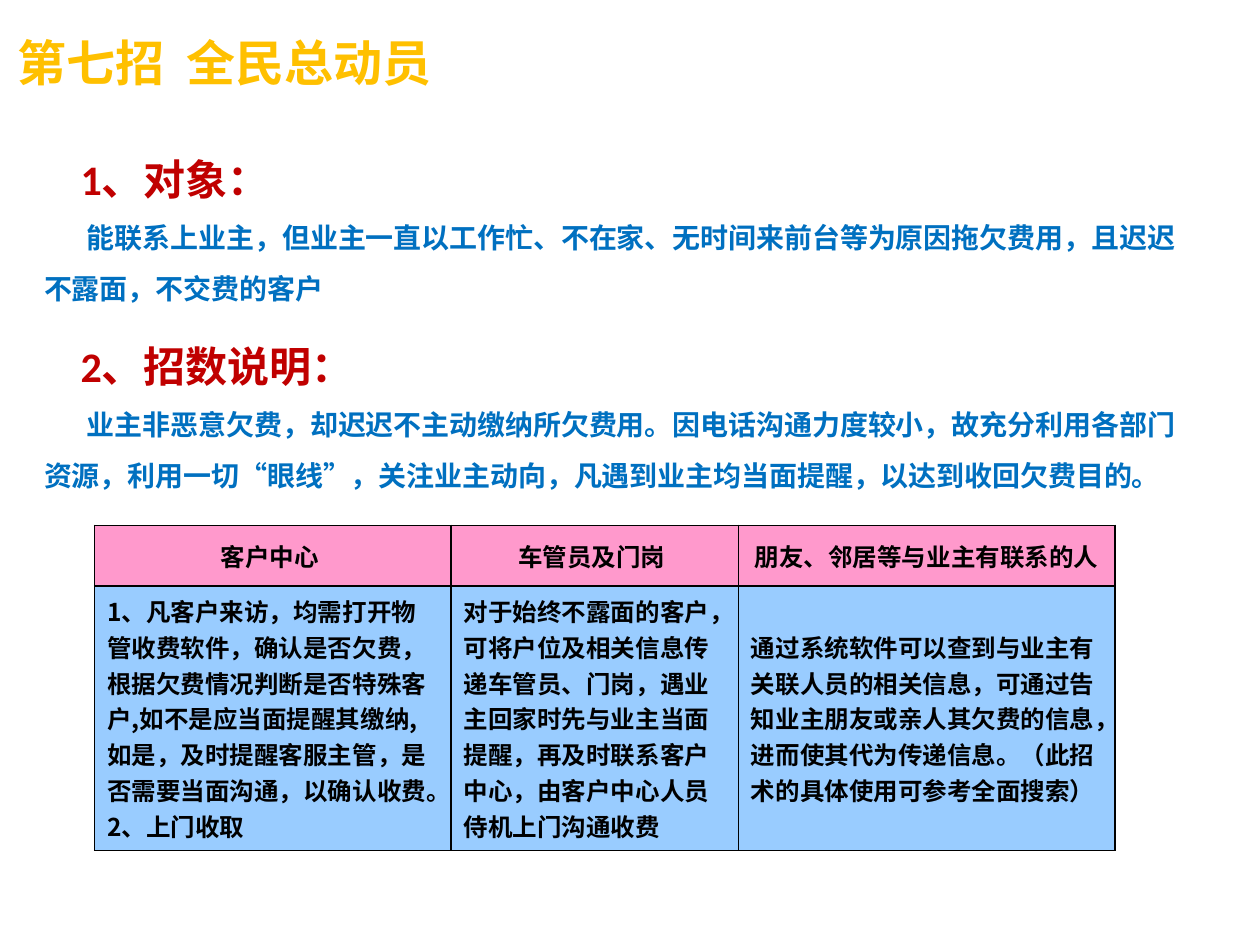
from pptx import Presentation
from pptx.dml.color import RGBColor
from pptx.enum import text
from pptx.oxml import ns
from pptx.util import Inches, Pt
from lxml import etree

COLORS = {
    "gold": "FFC000",
    "red": "C00000",
    "blue": "0070C0",
    "black": "000000",
    "pink": "FF99CC",
    "sky": "99CCFF",
}
CJK = "Noto Sans CJK SC"


def format_paragraph(para, size, color, latin=CJK):
    for span in para.runs:
        span.font.size = Pt(size)
        span.font.bold = True
        span.font.name = latin
        span.font.color.rgb = RGBColor.from_string(COLORS[color])
        east_asian = etree.SubElement(span.font._element, ns.qn("a:ea"))
        east_asian.set("typeface", CJK)


def place(box, left, top, width, height):
    box.left, box.top = Inches(left), Inches(top)
    box.width, box.height = Inches(width), Inches(height)
    box.text_frame.word_wrap = True
    box.text_frame.auto_size = text.MSO_AUTO_SIZE.NONE


deck = Presentation()
deck.slide_width, deck.slide_height = Inches(10), Inches(7.5)
page = deck.slides.add_slide(deck.slide_layouts[1])

title = page.shapes.title
place(title, 0, 0.21, 9.06, 0.57)
title.text_frame.text = " 第七招  全民总动员"
title.text_frame.vertical_anchor = text.MSO_ANCHOR.MIDDLE
para = title.text_frame.paragraphs[0]
para.alignment = text.PP_ALIGN.LEFT
format_paragraph(para, 28, "gold", "Times New Roman")
para.runs[0].text = " "
para.runs[0].font.size = Pt(12)
span = para.add_run()
span.text = "第七招  全民总动员"
format_paragraph(para, 28, "gold", "Times New Roman")
para.runs[0].font.size = Pt(12)

sections = [
    ("1、对象：",
     " 能联系上业主，但业主一直以工作忙、不在家、无时间来前台等为原因拖欠费用，且迟迟不露面，不交费的客户"),
    ("2、招数说明：",
     " 业主非恶意欠费，却迟迟不主动缴纳所欠费用。因电话沟通力度较小，故充分利用各部门资源，"
     "利用一切“眼线”，关注业主动向，凡遇到业主均当面提醒，以达到收回欠费目的。"),
]
body = page.placeholders[1]
place(body, 0.25, 0.92, 9.21, 2.99)
frame = body.text_frame
frame.vertical_anchor = text.MSO_ANCHOR.TOP
frame.margin_top = Inches(0.3)
frame.text = "\n".join(line for section in sections for line in section)
for index, para in enumerate(frame.paragraphs):
    para.line_spacing = Pt(28.8)
    para.space_before = Pt(20.5 if index == 2 else 0)
    properties = para._p.get_or_add_pPr()
    properties.set("marL", "0")
    properties.set("indent", str(Inches(0.29)))
    etree.SubElement(properties, ns.qn("a:buNone"))
    if index % 2 == 0:
        format_paragraph(para, 24, "red", "Calibri")
    else:
        format_paragraph(para, 16, "blue")

rows = [
    ["客户中心 ", "车管员及门岗 ", "朋友、邻居等与业主有联系的人"],
    ["1、凡客户来访，均需打开物管收费软件，确认是否欠费，根据欠费情况判断是否特殊客户,"
     "如不是应当面提醒其缴纳,如是，及时提醒客服主管，是否需要当面沟通，以确认收费。\n2、上门收取",
     "对于始终不露面的客户，可将户位及相关信息传递车管员、门岗，遇业主回家时先与业主当面提醒，"
     "再及时联系客户中心，由客户中心人员侍机上门沟通收费",
     "通过系统软件可以查到与业主有关联人员的相关信息，可通过告知业主朋友或亲人其欠费的信息，"
     "进而使其代为传递信息。（此招术的具体使用可参考全面搜索）"],
]
table = page.shapes.add_table(
    2, 3, Inches(0.75), Inches(4.17), Inches(8.1), Inches(2.58)).table
for column, width in zip(table.columns, (2.83, 2.28, 2.99)):
    column.width = Inches(width)
for row, height in zip(table.rows, (0.48, 2.1)):
    row.height = Inches(height)

for row_index, row in enumerate(rows):
    for column_index, content in enumerate(row):
        cell = table.cell(row_index, column_index)
        cell.text_frame.text = content
        cell.vertical_anchor = text.MSO_ANCHOR.MIDDLE
        for para in cell.text_frame.paragraphs:
            format_paragraph(para, 14, "black")
            para.alignment = text.PP_ALIGN.LEFT if row_index else text.PP_ALIGN.CENTER
        properties = cell._tc.get_or_add_tcPr()
        for side in ("lnL", "lnR", "lnT", "lnB"):
            border = etree.SubElement(properties, ns.qn("a:" + side), w=str(Pt(1)))
            fill = etree.SubElement(border, ns.qn("a:solidFill"))
            etree.SubElement(fill, ns.qn("a:srgbClr"), val=COLORS["black"])
        cell.fill.solid()
        cell.fill.fore_color.rgb = RGBColor.from_string(COLORS["sky" if row_index else "pink"])

deck.save("out.pptx")
